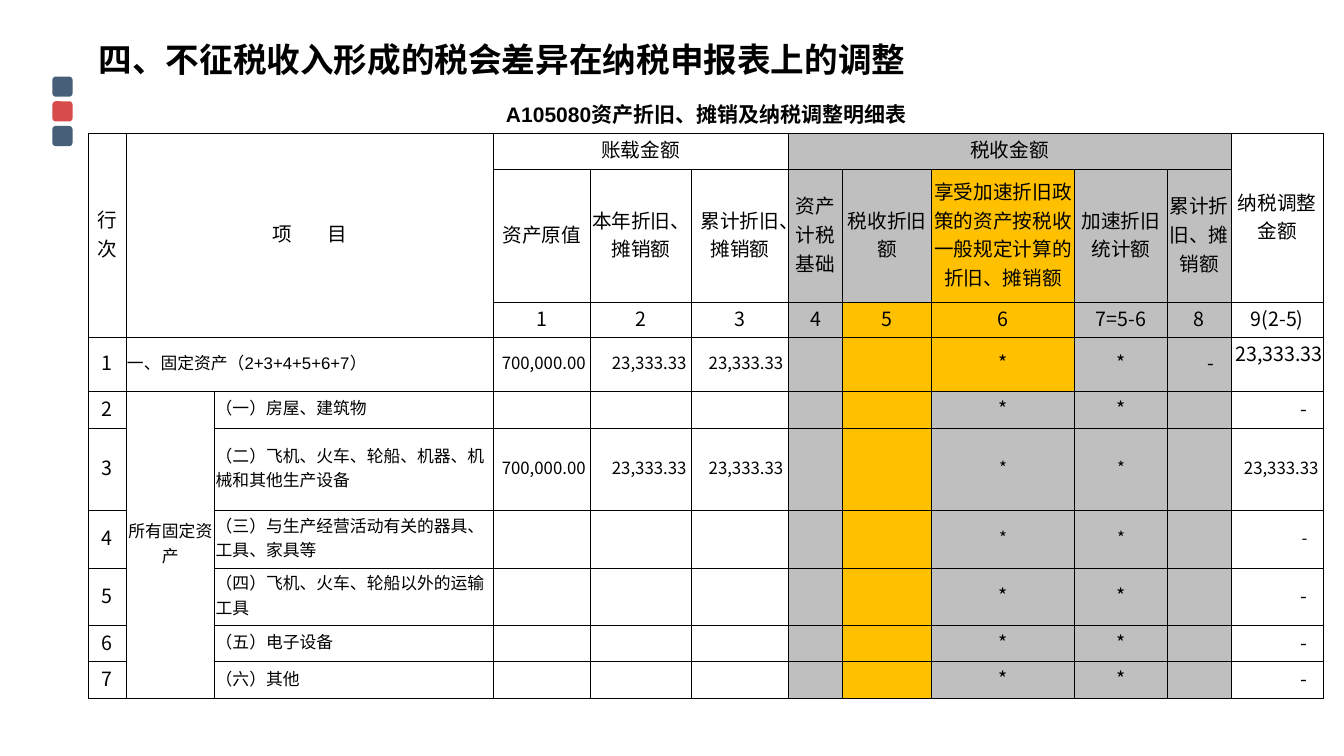
from lxml import etree
from pptx import Presentation
from pptx.dml.color import RGBColor
from pptx.enum.shapes import MSO_SHAPE
from pptx.enum.text import MSO_ANCHOR, PP_ALIGN
from pptx.oxml.ns import qn
from pptx.util import Inches, Pt

ROUNDED = MSO_SHAPE.ROUNDED_RECTANGLE
MIDDLE = MSO_ANCHOR.MIDDLE
LEFT, CENTER, RIGHT = PP_ALIGN.LEFT, PP_ALIGN.CENTER, PP_ALIGN.RIGHT

BLACK, GRAY, GOLD = "000000", "BFBFBF", "FFC000"
SLATE, RED = "475F77", "D74B4B"
LATIN, CHINESE, TITLE_FONT = "Arial", "Noto Sans CJK SC", "Roboto"

COLUMN_WIDTHS = [0.37, 0.88, 2.76, 0.97, 1, 0.96, 0.54, 0.88, 1.42, 0.92, 0.63, 0.92]
ROW_HEIGHTS = [0.36, 0.36, 1.32, 0.32, 0.54, 0.36, 0.82, 0.57, 0.57, 0.36, 0.36]
MERGES = [
    (0, 0, 0, 11), (1, 0, 3, 0), (1, 1, 3, 2), (1, 3, 1, 5), (1, 6, 1, 10),
    (1, 11, 2, 11), (4, 1, 4, 2), (5, 1, 10, 1),
]
GROUP_HEADERS = {0: "行次", 3: "账载金额", 6: "税收金额", 11: "纳税调整金额"}
COLUMN_HEADERS = [
    "资产原值", "本年折旧、摊销额", "累计折旧、摊销额", "资产计税基础", "税收折旧额",
    "享受加速折旧政策的资产按税收一般规定计算的折旧、摊销额", "加速折旧统计额",
    "累计折旧、摊销额",
]
COLUMN_NUMBERS = ["1", "2", "3", "4", "5", "6", "7=5-6", "8", "9(2-5)"]
ASSET_ITEMS = [
    "（一）房屋、建筑物",
    "（二）飞机、火车、轮船、机器、机械和其他生产设备",
    "（三）与生产经营活动有关的器具、工具、家具等",
    "（四）飞机、火车、轮船以外的运输工具",
    "（五）电子设备",
    "（六）其他",
]
AMOUNTS = ["700,000.00", "23,333.33", "23,333.33"]
TOTAL_ROW, FIRST_ITEM_ROW, MACHINERY_ROW = 4, 5, 6
SMALL_ROWS = (6, 7)


def color(value):
    return RGBColor.from_string(value)


def cell_fill(row, column):
    if row == 0 or not 6 <= column <= 10:
        return None
    gold = (column == 7 and row >= 3) or (column == 8 and 2 <= row <= 4)
    return GOLD if gold else GRAY


class SlideBuilder:
    def __init__(self, presentation):
        self.slide = presentation.slides.add_slide(presentation.slide_layouts[6])

    def add_run(self, paragraph, text, size, font, bold=False, spacing=None):
        run = paragraph.add_run()
        run.text = text
        run.font.size = Pt(size)
        run.font.name = font
        run.font.bold = bold
        run.font.color.rgb = color(BLACK)
        properties = run.font._element
        etree.SubElement(properties, qn("a:ea")).set("typeface", CHINESE)
        if spacing:
            properties.set("spc", str(spacing * 100))

    def add_square(self, left, top, fill):
        shape = self.slide.shapes.add_shape(
            ROUNDED, Inches(left), Inches(top), Inches(0.2), Inches(0.2))
        shape.shadow.inherit = False
        shape.fill.solid()
        shape.fill.fore_color.rgb = color(fill)
        shape.line.fill.background()

    def add_title(self, text):
        box = self.slide.shapes.add_textbox(
            Inches(0.88), Inches(0.34), Inches(9.61), Inches(0.5))
        box.text_frame.word_wrap = True
        self.add_run(box.text_frame.paragraphs[0], text, 24, TITLE_FONT, True)

    def add_grid(self, left, top, widths, heights):
        frame = self.slide.shapes.add_table(
            len(heights), len(widths), Inches(left), Inches(top),
            Inches(sum(widths)), Inches(sum(heights)))
        self.table = frame.table
        self.table.first_row = False
        self.table.horz_banding = False
        for column, width in zip(self.table.columns, widths):
            column.width = Inches(width)
        for row, height in zip(self.table.rows, heights):
            row.height = Inches(height)
        for row in range(len(heights)):
            for column in range(len(widths)):
                self.style_cell(row, column)
        for first_row, first_column, last_row, last_column in MERGES:
            self.table.cell(first_row, first_column).merge(
                self.table.cell(last_row, last_column))

    def style_cell(self, row, column):
        cell = self.table.cell(row, column)
        cell.vertical_anchor = MIDDLE
        cell.margin_left = cell.margin_right = cell.margin_top = Inches(0.01)
        cell.margin_bottom = Inches(0.05)
        properties = cell._tc.get_or_add_tcPr()
        for side in ("lnL", "lnR", "lnT", "lnB"):
            line = etree.SubElement(properties, qn(f"a:{side}"), w=str(Pt(0.5)))
            if row == 0 and side != "lnB":
                etree.SubElement(line, qn("a:noFill"))
            else:
                solid = etree.SubElement(line, qn("a:solidFill"))
                etree.SubElement(solid, qn("a:srgbClr"), val=BLACK)
        fill = cell_fill(row, column)
        if fill:
            cell.fill.solid()
            cell.fill.fore_color.rgb = color(fill)
        else:
            cell.fill.background()
        paragraph = cell.text_frame.paragraphs[0]
        etree.SubElement(paragraph._p, qn("a:endParaRPr"), sz="1200")

    def set_cell(self, row, column, text, size=14, font=LATIN, align=CENTER,
                 bold=False, right_margin=0.01):
        cell = self.table.cell(row, column)
        cell.margin_right = Inches(right_margin)
        paragraph = cell.text_frame.paragraphs[0]
        paragraph.alignment = align
        self.add_run(paragraph, text, size, font, bold)

    def add_headers(self):
        self.set_cell(0, 0, "A105080资产折旧、摊销及纳税调整明细表", 15, bold=True)
        for column, text in GROUP_HEADERS.items():
            self.set_cell(1, column, text)
        item_heading = self.table.cell(1, 1).text_frame.paragraphs[0]
        item_heading.alignment = CENTER
        self.add_run(item_heading, "项 ", 14, LATIN, spacing=11)
        self.add_run(item_heading, "目", 14, LATIN)
        for column, text in enumerate(COLUMN_HEADERS, 3):
            self.set_cell(2, column, text)
        for column, text in enumerate(COLUMN_NUMBERS, 3):
            self.set_cell(3, column, text, font=CHINESE)

    def add_body(self):
        self.set_cell(TOTAL_ROW, 1, "一、固定资产（2+3+4+5+6+7）", 12, align=LEFT)
        self.set_cell(FIRST_ITEM_ROW, 1, "所有固定资产", 12)
        for row, text in enumerate(ASSET_ITEMS, FIRST_ITEM_ROW):
            self.set_cell(row, 2, text, 12, align=LEFT)
        for row in range(TOTAL_ROW, len(ROW_HEIGHTS)):
            size = 12 if row in SMALL_ROWS else 14
            self.set_cell(row, 0, str(row - 3), font=CHINESE)
            for column in (8, 9):
                self.set_cell(row, column, "*", size, CHINESE)
            if row not in (TOTAL_ROW, MACHINERY_ROW):
                self.set_cell(row, 11, "-", size, CHINESE, RIGHT, right_margin=0.16)
        for row in (TOTAL_ROW, MACHINERY_ROW):
            for column, text in enumerate(AMOUNTS, 3):
                self.set_cell(row, column, text, 12, CHINESE, RIGHT, right_margin=0.05)
        self.set_cell(TOTAL_ROW, 10, "-", 14, CHINESE, RIGHT, right_margin=0.16)
        self.set_cell(TOTAL_ROW, 11, "23,333.33", 14, CHINESE, RIGHT)
        self.table.cell(TOTAL_ROW, 11).margin_bottom = Inches(0.23)
        self.set_cell(MACHINERY_ROW, 11, "23,333.33", 12, CHINESE, RIGHT, right_margin=0.05)


def main():
    presentation = Presentation()
    presentation.slide_width = Inches(13.33)
    presentation.slide_height = Inches(7.5)
    builder = SlideBuilder(presentation)
    for index, fill in enumerate((SLATE, RED, SLATE)):
        builder.add_square(0.52, 0.76 + index * 0.245, fill)
    builder.add_grid(0.88, 0.96, COLUMN_WIDTHS, ROW_HEIGHTS)
    builder.add_headers()
    builder.add_body()
    builder.add_title("四、不征税收入形成的税会差异在纳税申报表上的调整")
    presentation.save("out.pptx")


if __name__ == "__main__":
    main()
